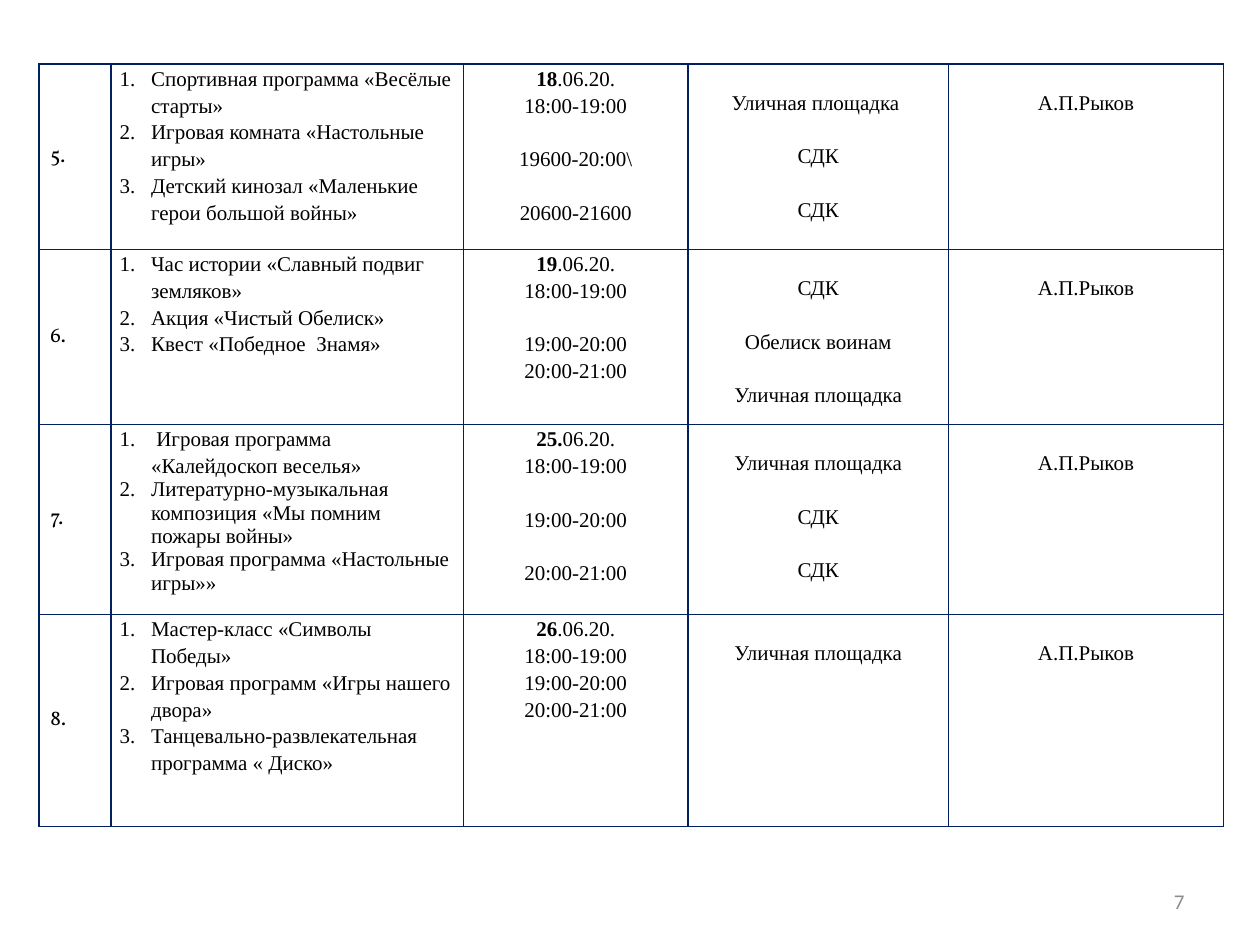
from lxml.etree import SubElement
from pptx import Presentation
from pptx.dml.color import RGBColor
from pptx.enum.text import MSO_ANCHOR, PP_ALIGN
from pptx.oxml.ns import qn
from pptx.util import Inches, Pt

NAVY = RGBColor(0x00, 0x20, 0x60)
BLACK = RGBColor(0x00, 0x00, 0x00)
WHITE = RGBColor(0xFF, 0xFF, 0xFF)
GRAY = RGBColor(0x8C, 0x8C, 0x8C)

COLUMNS = [5.7, 28, 17.8, 20.7, 21.8]
ROWS = [19.6, 18.53, 20.13, 22.4]
LEADER = ["", "А.П.Рыков"]

# An empty entry in a list of lines stands for a one-line gap.
EVENTS = [
    ("5.",
     ["Спортивная программа «Весёлые старты»", "Игровая комната «Настольные игры»",
      "Детский кинозал «Маленькие герои большой войны»"],
     ("18", ".06.20."), ["18:00-19:00", "", "19600-20:00\\", "", "20600-21600"],
     ["", "Уличная площадка ", "", "СДК", "", "СДК"]),
    ("6.",
     ["Час истории «Славный подвиг земляков»", "Акция «Чистый Обелиск»",
      "Квест «Победное  Знамя»"],
     ("19", ".06.20."), ["18:00-19:00", "", "19:00-20:00", "20:00-21:00"],
     ["", "СДК", "", "Обелиск воинам", "", "Уличная площадка"]),
    ("7.",
     [" Игровая программа «Калейдоскоп веселья»",
      "Литературно-музыкальная композиция «Мы помним пожары войны»",
      "Игровая программа «Настольные игры»»"],
     ("25.", "06.20."), ["18:00-19:00", "", "19:00-20:00", "", "20:00-21:00"],
     ["", "Уличная площадка", "", "СДК", "", "СДК"]),
    ("8.",
     ["Мастер-класс «Символы Победы»", "Игровая программ «Игры нашего двора»",
      "Танцевально-развлекательная программа « Диско»"],
     ("26", ".06.20."), ["18:00-19:00", "19:00-20:00", "20:00-21:00"],
     ["", "Уличная площадка"]),
]


class SlideBuilder:
    """Holds the text style and the current slide; lengths are percent of the slide."""

    font, number_font, size = "Times New Roman", "Vollkorn", Pt(12)
    spacing, gap, first_gap = 1.15, Pt(15.3), Inches(0.19)

    def __init__(self, prs):
        self.prs = prs
        self.slide = prs.slides.add_slide(prs.slide_layouts[6])

    def x(self, share):
        return round(self.prs.slide_width * share / 100)

    def y(self, share):
        return round(self.prs.slide_height * share / 100)

    def run(self, p, text, font=None, color=BLACK, bold=False):
        r = p.add_run()
        r.text = text
        r.font.name = font or self.font
        r.font.size = self.size
        r.font.bold = bold
        r.font.color.rgb = color

    def text(self, left, top, width, height, text, font, color):
        sp = self.slide.shapes.add_textbox(
            self.x(left), self.y(top), self.x(width), self.y(height))
        tf = sp.text_frame
        tf.word_wrap = True
        tf.vertical_anchor = MSO_ANCHOR.MIDDLE
        p = tf.paragraphs[0]
        p.alignment = PP_ALIGN.RIGHT
        self.run(p, text, font, color)

    def table(self, left, top, columns, rows):
        shape = self.slide.shapes.add_table(
            len(rows), len(columns), self.x(left), self.y(top),
            self.x(sum(columns)), self.y(sum(rows)))
        table = shape.table
        for column, share in zip(table.columns, columns):
            column.width = self.x(share)
        for row, share in zip(table.rows, rows):
            row.height = self.y(share)
        for cell in table.iter_cells():
            self.frame(cell)
        return table

    def frame(self, cell):
        cell.margin_left = cell.margin_right = Inches(0.07)
        cell.margin_top = cell.margin_bottom = 0
        tcPr = cell._tc.get_or_add_tcPr()
        for side in ("a:lnL", "a:lnR", "a:lnT", "a:lnB"):
            ln = SubElement(tcPr, qn(side), w=str(Pt(1)))
            fill = SubElement(ln, qn("a:solidFill"))
            SubElement(fill, qn("a:srgbClr"), val=str(NAVY))
        cell.fill.solid()
        cell.fill.fore_color.rgb = WHITE

    def number(self, cell, text):
        cell.vertical_anchor = MSO_ANCHOR.MIDDLE
        cell.margin_left = cell.margin_right = Inches(0.09)
        cell.margin_top = cell.margin_bottom = Inches(0.04)
        self.run(cell.text_frame.paragraphs[0], text, self.number_font)

    def numbered(self, cell, items, spacings):
        tf = cell.text_frame
        for i, (item, spacing) in enumerate(zip(items, spacings)):
            p = tf.add_paragraph() if i else tf.paragraphs[0]
            pPr = p._p.get_or_add_pPr()
            pPr.set("marL", str(Inches(0.25)))
            pPr.set("indent", str(Inches(-0.25)))
            SubElement(pPr, qn("a:buFont"), typeface="+mj-lt")
            SubElement(pPr, qn("a:buAutoNum"), type="arabicPeriod")
            p.line_spacing = spacing
            self.run(p, item)

    def centred(self, cell, lines, lead=None):
        tf = cell.text_frame
        p = tf.paragraphs[0]
        started = gap = False
        for line in ([lead] if lead else []) + lines:
            if not line:
                gap = True
                continue
            if started:
                p = tf.add_paragraph()
                p.space_before = self.gap if gap else 0
            elif gap:
                cell.margin_top = self.first_gap
            p.alignment = PP_ALIGN.CENTER
            p.line_spacing = self.spacing
            if line is lead:
                self.run(p, lead[0], bold=True)
                self.run(p, lead[1])
            else:
                self.run(p, line)
            started, gap = True, False


def main():
    prs = Presentation()
    prs.slide_width, prs.slide_height = Inches(10), Inches(7.5)
    s = SlideBuilder(prs)
    s.text(71.7, 92.67, 23.3, 5.33, "7", "Calibri", GRAY)
    table = s.table(3.1, 6.8, COLUMNS, ROWS)
    for row, (number, items, date, times, places) in enumerate(EVENTS):
        cells = table.rows[row].cells
        s.number(cells[0], number)
        rest = 1.0 if number == "7." else s.spacing
        s.numbered(cells[1], items, [s.spacing, rest, rest])
        s.centred(cells[2], times, lead=date)
        s.centred(cells[3], places)
        s.centred(cells[4], LEADER)
    prs.save("out.pptx")


if __name__ == "__main__":
    main()
